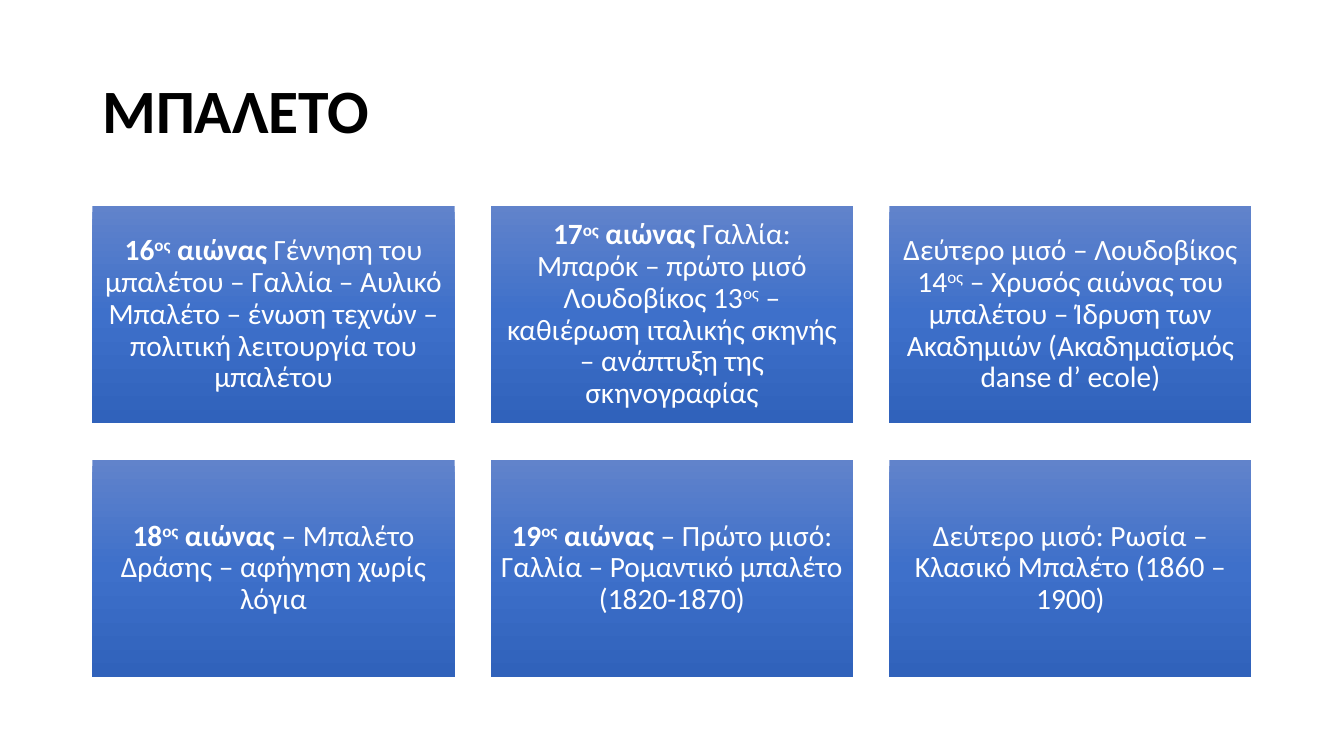
from copy import deepcopy
from dataclasses import dataclass

from pptx import Presentation
from pptx import util as u
from pptx.dml.color import RGBColor
from pptx.enum import shapes, text


@dataclass(frozen=True)
class Theme:
    font: str = "Calibri"
    title_size: float = 44
    card_size: float = 21
    title_color: str = "000000"
    card_color: str = "FFFFFF"
    gradient: tuple = ((0, "6183CB"), (0.5, "3E70CA"), (1, "3062BB"))
    line_spacing: float = 0.9


@dataclass(frozen=True)
class Box:
    left: float
    top: float
    width: float
    height: float

    def lengths(self):
        return [u.Pt(v) for v in (self.left, self.top, self.width, self.height)]


THEME = Theme()
COLUMNS = 3
GAP_RATIO = 0.1      # gap between cards, as a share of card width
HEIGHT_RATIO = 0.6   # card height, as a share of card width

# Each card: bold lead, then regular text; ^ encloses superscript
CARDS = [
    ("16^ος^ αιώνας ", "Γέννηση του μπαλέτου – Γαλλία – Αυλικό Μπαλέτο – "
     "ένωση τεχνών – πολιτική λειτουργία του μπαλέτου"),
    ("17^ος^ αιώνας ", "Γαλλία: Μπαρόκ – πρώτο μισό Λουδοβίκος 13^ος^ – "
     "καθιέρωση ιταλικής σκηνής – ανάπτυξη της σκηνογραφίας"),
    ("", "Δεύτερο μισό – Λουδοβίκος 14^ος^ – Χρυσός αιώνας του μπαλέτου – "
     "Ίδρυση των Ακαδημιών (Ακαδημαϊσμός danse d’ ecole)"),
    ("18^ος^ αιώνας ", "– Μπαλέτο Δράσης – αφήγηση χωρίς λόγια"),
    ("19^ος^ αιώνας ", "– Πρώτο μισό: Γαλλία – Ρομαντικό μπαλέτο (1820-1870)"),
    ("", "Δεύτερο μισό: Ρωσία – Κλασικό Μπαλέτο (1860 – 1900)"),
]


def style_paragraph(para, size, color, align):
    para.alignment = align
    para.line_spacing = THEME.line_spacing
    para.font.name = THEME.font
    para.font.size = u.Pt(size)
    para.font.color.rgb = RGBColor.from_string(color)


def add_spans(para, marked, bold):
    for index, part in enumerate(marked.split("^")):
        if not part:
            continue
        span = para.add_run()
        span.text = part
        span.font.bold = bold
        if index % 2:
            span.font._element.set("baseline", "30000")


def fill_gradient(shape):
    fill = shape.fill
    fill.gradient()
    fill.gradient_angle = 270  # top to bottom
    # Add the middle stop to the default pair
    stop_list = shape._element.spPr.find(".//{*}gsLst")
    stop_list.insert(1, deepcopy(stop_list[0]))
    for stop, (position, color) in zip(fill.gradient_stops, THEME.gradient):
        stop.position = position
        stop.color.rgb = RGBColor.from_string(color)


def add_title(page, box, words):
    frame = page.shapes.add_textbox(*box.lengths()).text_frame
    frame.word_wrap = True
    frame.vertical_anchor = text.MSO_ANCHOR.MIDDLE
    para = frame.paragraphs[0]
    style_paragraph(para, THEME.title_size, THEME.title_color, text.PP_ALIGN.LEFT)
    add_spans(para, words, True)


def add_card(page, box, lead, body):
    card = page.shapes.add_shape(shapes.MSO_SHAPE.RECTANGLE, *box.lengths())
    card.shadow.inherit = False
    card.line.fill.background()
    fill_gradient(card)
    frame = card.text_frame
    frame.word_wrap = True
    frame.vertical_anchor = text.MSO_ANCHOR.MIDDLE
    frame.margin_left = frame.margin_right = u.Pt(6.3)
    frame.margin_top = frame.margin_bottom = u.Pt(6.3)
    para = frame.paragraphs[0]
    style_paragraph(para, THEME.card_size, THEME.card_color, text.PP_ALIGN.CENTER)
    add_spans(para, lead, True)
    add_spans(para, body, False)


def add_card_grid(page, box, cards):
    width = box.width / (COLUMNS + (COLUMNS - 1) * GAP_RATIO)
    height = width * HEIGHT_RATIO
    gap = width * GAP_RATIO
    for index, (lead, body) in enumerate(cards):
        row, column = divmod(index, COLUMNS)
        cell = Box(box.left + column * (width + gap),
                   box.top + row * (height + gap), width, height)
        add_card(page, cell, lead, body)


def main():
    deck = Presentation()
    deck.slide_width, deck.slide_height = u.Pt(960), u.Pt(540)
    page = deck.slides.add_slide(deck.slide_layouts[6])
    # Heading
    add_title(page, Box(66, 28.75, 828, 104.4), "ΜΠΑΛΕΤΟ")
    # Timeline cards
    add_card_grid(page, Box(66, 147.2, 828, 336.4), CARDS)
    deck.save("out.pptx")


if __name__ == "__main__":
    main()
